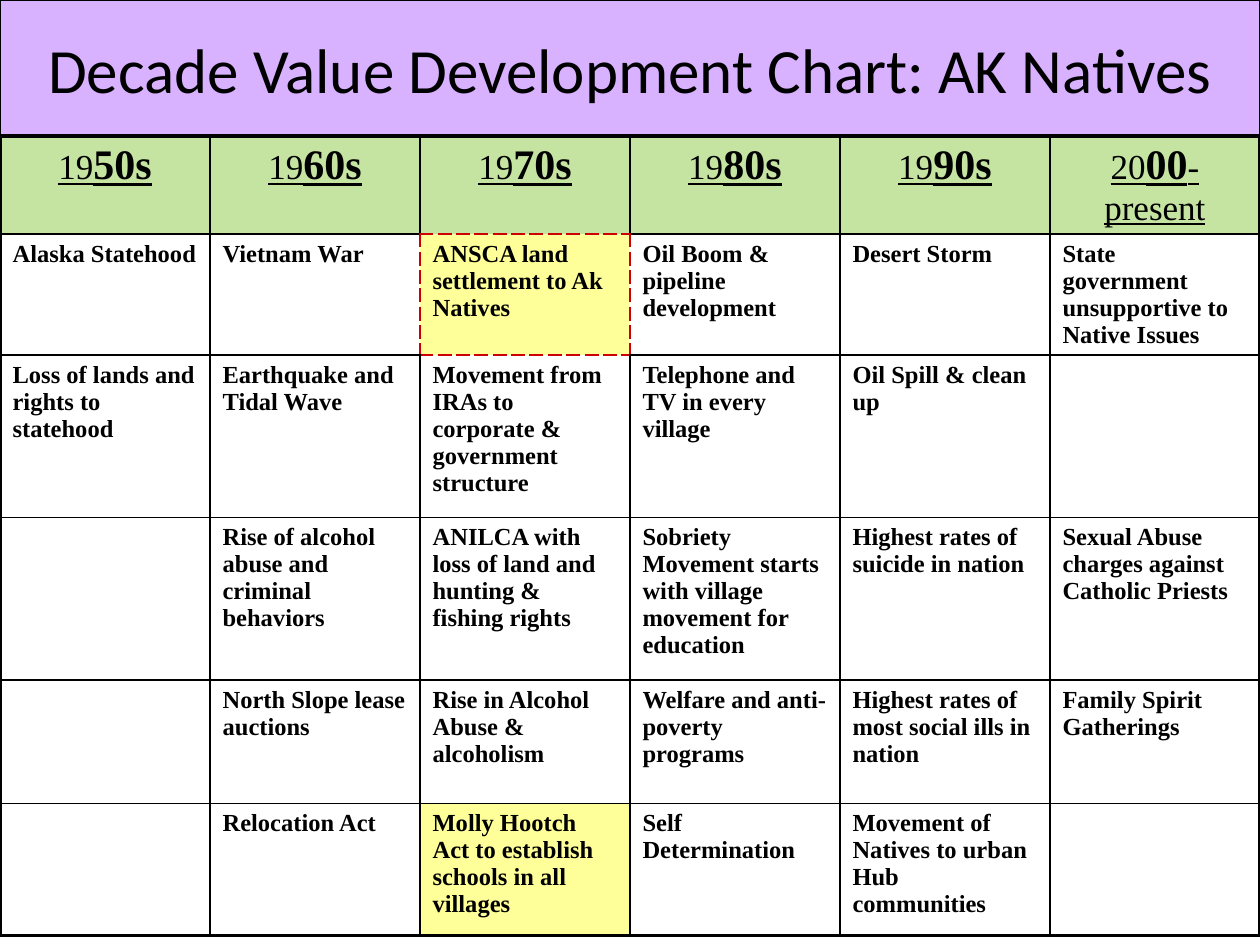
from pptx import Presentation
from pptx.dml.color import RGBColor
from pptx.enum.text import MSO_ANCHOR, MSO_AUTO_SIZE, PP_ALIGN
from pptx.oxml.ns import qn
from pptx.util import Inches, Pt
from lxml.etree import SubElement

COLORS = {"black": "000000", "white": "FFFFFF", "title": "D8B1FF",
          "header": "C5E3A1", "highlight": "FFFF99", "dash": "CC0000"}

DECADES = [("19", "50s", ""), ("19", "60s", ""), ("19", "70s", ""),
           ("19", "80s", ""), ("19", "90s", ""), ("20", "00", "- present")]
EVENTS = [
    ["Alaska Statehood", "Vietnam War", "ANSCA land settlement to Ak Natives",
     "Oil Boom & pipeline development", "Desert Storm",
     "State government unsupportive to Native Issues"],
    ["Loss of lands and rights to statehood", "Earthquake and Tidal Wave",
     "Movement from IRAs to corporate & government structure",
     "Telephone and TV in every village", "Oil Spill & clean up", ""],
    ["", "Rise of alcohol abuse and criminal behaviors",
     "ANILCA with loss of land and hunting & fishing rights",
     "Sobriety Movement starts with village movement for education",
     "Highest rates of suicide in nation",
     "Sexual Abuse charges against Catholic Priests"],
    ["", "North Slope lease auctions", "Rise in Alcohol Abuse & alcoholism",
     "Welfare and anti-poverty programs",
     "Highest rates of most social ills in nation", "Family Spirit Gatherings"],
    ["", "Relocation Act", "Molly Hootch Act to establish schools in all villages",
     "Self Determination", "Movement of Natives to urban Hub communities", ""],
]
ROW_HEIGHTS = [0.75, 0.96, 1.29, 1.29, 0.98, 1.05]
DASHED_CELL = (1, 2)
HIGHLIGHTED = {DASHED_CELL, (5, 2)}
SIDES = {"lnL": (0, -1), "lnR": (0, 1), "lnT": (-1, 0), "lnB": (1, 0)}


def rgb(name):
    return RGBColor.from_string(COLORS[name])


class DecadeChart:
    title_font = "Calibri"
    table_font = "Times New Roman"

    def __init__(self, deck):
        self.page = deck.slides.add_slide(deck.slide_layouts[5])

    def format_font(self, font, name, size):
        font.name, font.size = name, Pt(size)
        font.color.rgb = rgb("black")

    def add_title(self, text, height):
        title = self.page.shapes.title
        title.left = title.top = 0
        title.width, title.height = Inches(10), Inches(height)
        title.fill.solid()
        title.fill.fore_color.rgb = rgb("title")
        title.line.color.rgb = rgb("black")
        title.line.width = Pt(0.75)
        frame = title.text_frame
        frame.text = text
        frame.word_wrap = True
        frame.auto_size = MSO_AUTO_SIZE.NONE
        frame.vertical_anchor = MSO_ANCHOR.MIDDLE
        para = frame.paragraphs[0]
        para.alignment = PP_ALIGN.CENTER
        self.format_font(para.font, self.title_font, 36)

    def add_table(self, top):
        rows, columns = len(ROW_HEIGHTS), len(DECADES)
        table = self.page.shapes.add_table(
            rows, columns, 0, Inches(top), Inches(10), Inches(sum(ROW_HEIGHTS))).table
        table.first_row = table.horz_banding = False
        for row, height in zip(table.rows, ROW_HEIGHTS):
            row.height = Inches(height)
        for r in range(rows):
            for c in range(columns):
                cell = table.cell(r, c)
                self.add_borders(cell, r, c, rows, columns)
                if r == 0:
                    self.fill_header(cell, DECADES[c])
                else:
                    self.fill_event(cell, EVENTS[r - 1][c], (r, c) in HIGHLIGHTED)

    def add_borders(self, cell, r, c, rows, columns):
        """Thick outer edges, thin inner ones, dashes around one cell."""
        properties = cell._tc.get_or_add_tcPr()
        for side, (down, right) in SIDES.items():
            neighbor = (r + down, c + right)
            inner = 0 <= neighbor[0] < rows and 0 <= neighbor[1] < columns
            dashed = DASHED_CELL in ((r, c), neighbor)
            line = SubElement(properties, qn(f"a:{side}"), w=str(Pt(1 if inner else 2.25)))
            fill = SubElement(line, qn("a:solidFill"))
            SubElement(fill, qn("a:srgbClr"), val=COLORS["dash" if dashed else "black"])
            SubElement(line, qn("a:prstDash"), val="lgDash" if dashed else "solid")

    def fill_cell(self, cell, color, size):
        cell.fill.solid()
        cell.fill.fore_color.rgb = rgb(color)
        para = cell.text_frame.paragraphs[0]
        self.format_font(para.font, self.table_font, size)
        return para

    def fill_header(self, cell, parts):
        para = self.fill_cell(cell, "header", 20)
        para.alignment = PP_ALIGN.CENTER
        para.font.underline = True
        for part, size, bold in zip(parts, (20, 24, 20), (False, True, False)):
            if part:
                span = para.add_run()
                span.text = part
                span.font.size, span.font.bold = Pt(size), bold

    def fill_event(self, cell, text, highlighted):
        cell.text = text
        para = self.fill_cell(cell, "highlight" if highlighted else "white", 14)
        para.font.bold = True


def main():
    deck = Presentation()
    deck.slide_width, deck.slide_height = Inches(10), Inches(7.5)
    chart = DecadeChart(deck)
    chart.add_title("Decade Value Development Chart: AK Natives", 1.08)
    chart.add_table(1.08)
    deck.save("out.pptx")


if __name__ == "__main__":
    main()
